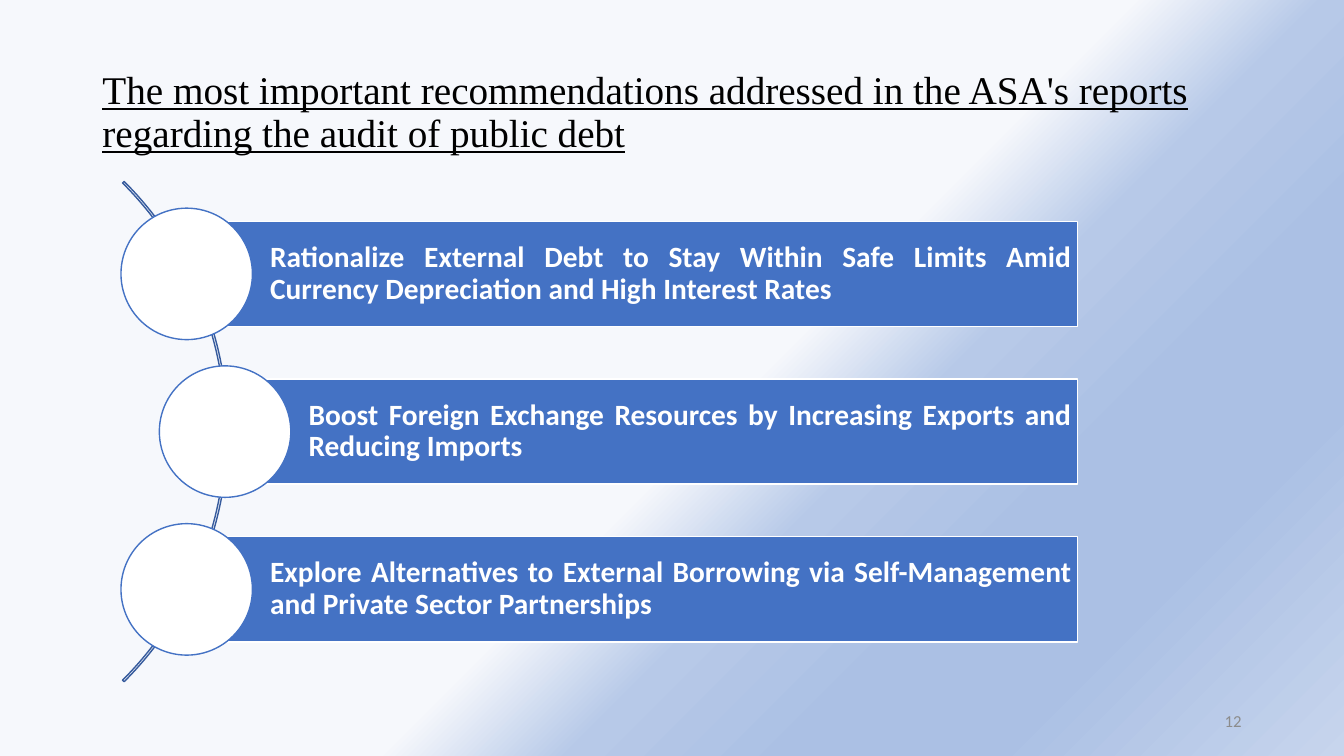
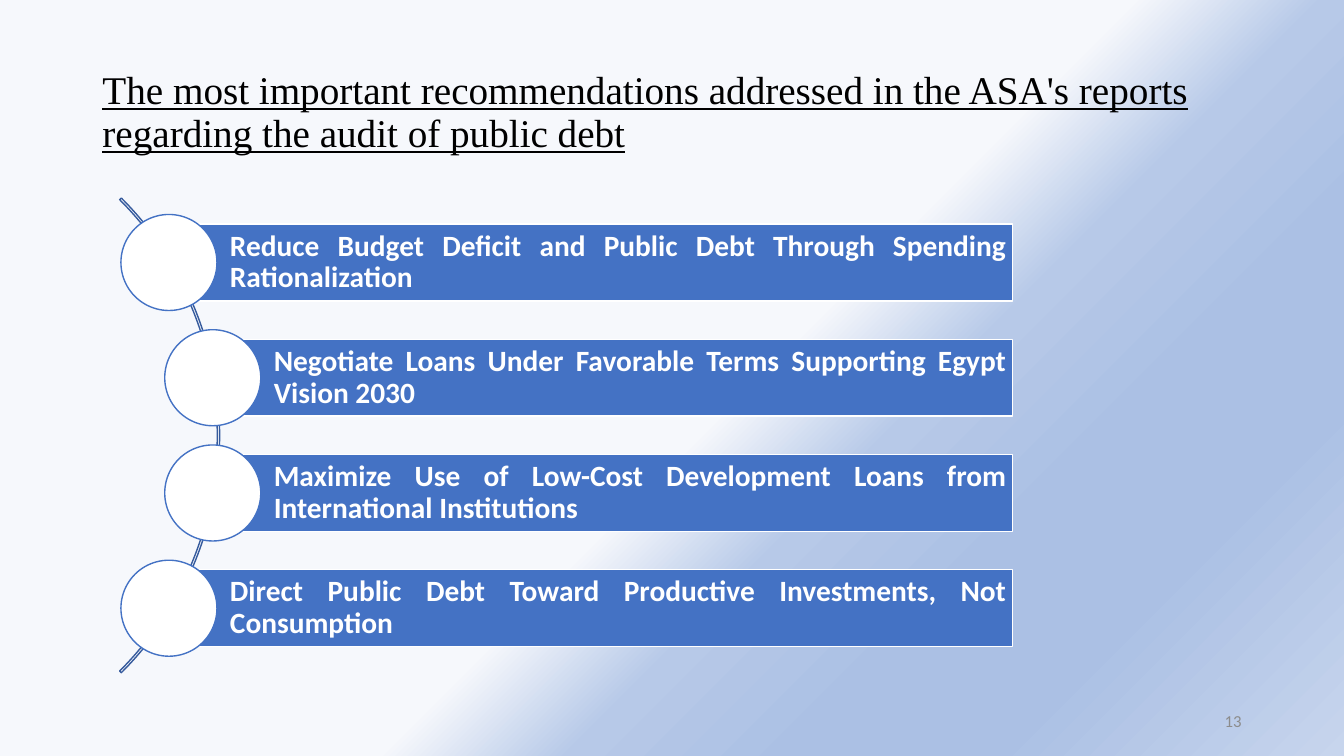
from copy import deepcopy

from pptx import Presentation
from pptx.dml.color import RGBColor
from pptx.enum.shapes import MSO_SHAPE
from pptx.enum.text import MSO_ANCHOR, MSO_AUTO_SIZE, PP_ALIGN
from pptx.oxml import parse_xml
from pptx.oxml.ns import nsdecls, qn
from pptx.util import Pt

# Shared colours and formats
BLACK = RGBColor(0x00, 0x00, 0x00)
WHITE = RGBColor(0xFF, 0xFF, 0xFF)
BLUE = RGBColor(0x44, 0x72, 0xC4)
DARK_BLUE = RGBColor(0x36, 0x5B, 0x9D)
GREY = RGBColor(0x8C, 0x8C, 0x8C)
BACKGROUND_STOPS = [
    (0.54, RGBColor(0xF6, 0xF8, 0xFC)),
    (0.63, RGBColor(0xB7, 0xC9, 0xE8)),
    (0.74, RGBColor(0xAB, 0xC0, 0xE4)),
    (0.83, RGBColor(0xAB, 0xC0, 0xE4)),
    (1.00, RGBColor(0xC7, 0xD5, 0xED)),
]
TITLE = ("The most important recommendations addressed in the ASA's reports "
         "regarding the audit of public debt")
TITLE_FONT = {"name": "Times New Roman", "size": Pt(28), "underline": True}
BAR_FONT = {"name": "Calibri", "size": Pt(21), "bold": True}
NUMBER_FONT = {"name": "Calibri", "size": Pt(12)}
BAR_MARGIN = Pt(4.2)
CIRCLE_LEFT = 86.4
FIRST_NUMBER = 12

# One diagram per slide; each row is (indent, text), lengths in points
DIAGRAMS = [
    {
        "circle": 93.9, "middle": 308.3, "bar_right": 769.6,
        "arc_left": -342.7, "arc_size": 505.4, "arc_thickness": 0.0031,
        "rows": [
            (0, "Rationalize External Debt to Stay Within Safe Limits Amid "
                "Currency Depreciation and High Interest Rates"),
            (27.4, "Boost Foreign Exchange Resources by Increasing Exports and "
                   "Reducing Imports"),
            (0, "Explore Alternatives to External Borrowing via Self-Management "
                "and Private Sector Partnerships"),
        ],
    },
    {
        "circle": 68.6, "middle": 311, "bar_right": 723.1,
        "arc_left": -322.6, "arc_size": 479.5, "arc_thickness": 0.0035,
        "rows": [
            (0, "Reduce Budget Deficit and Public Debt Through Spending "
                "Rationalization"),
            (31.3, "Negotiate Loans Under Favorable Terms Supporting Egypt "
                   "Vision 2030"),
            (31.3, "Maximize Use of Low-Cost Development Loans from "
                   "International Institutions"),
            (0, "Direct Public Debt Toward Productive Investments, Not "
                "Consumption"),
        ],
    },
]


def add_outlined_shape(slide, preset, left, top, width, height, fill, line):
    shape = slide.shapes.add_shape(preset, Pt(left), Pt(top), Pt(width), Pt(height))
    shape.shadow.inherit = False
    if fill is None:
        shape.fill.background()
    else:
        shape.fill.solid()
        shape.fill.fore_color.rgb = fill
    shape.line.color.rgb = line
    shape.line.width = Pt(1)
    return shape


def format_run(run, font_format, color):
    for name, value in font_format.items():
        setattr(run.font, name, value)
    run.font.color.rgb = color


presentation = Presentation()
presentation.slide_width = Pt(960)
presentation.slide_height = Pt(540)
presentation.element.set("firstSlideNum", str(FIRST_NUMBER))

# Gradient background on the master
master = presentation.slide_master
background_fill = master.background.fill
background_fill.gradient()
background_fill.gradient_angle = 315
stop_list = master.element.find(".//" + qn("a:gsLst"))
while len(stop_list) < len(BACKGROUND_STOPS):
    stop_list.append(deepcopy(stop_list[-1]))
for stop, (position, color) in zip(background_fill.gradient_stops, BACKGROUND_STOPS):
    stop.position = position
    stop.color.rgb = color

# Title position on the layout
layout = presentation.slide_layouts.get_by_name("Title Only")
layout_title = layout.placeholders[0]
layout_title.left, layout_title.top = Pt(66), Pt(28.8)
layout_title.width, layout_title.height = Pt(828), Pt(104.4)

for number, diagram in enumerate(DIAGRAMS, FIRST_NUMBER):
    slide = presentation.slides.add_slide(layout)

    # Title
    title_frame = slide.shapes.title.text_frame
    title_frame.auto_size = MSO_AUTO_SIZE.NONE
    title_frame.vertical_anchor = MSO_ANCHOR.MIDDLE
    paragraph = title_frame.paragraphs[0]
    paragraph.alignment = PP_ALIGN.LEFT
    paragraph.line_spacing = 0.9
    run = paragraph.add_run()
    run.text = TITLE
    format_run(run, TITLE_FONT, BLACK)

    # Arc behind the circles
    arc_size = diagram["arc_size"]
    arc = add_outlined_shape(slide, MSO_SHAPE.BLOCK_ARC, diagram["arc_left"],
                             diagram["middle"] - arc_size / 2, arc_size, arc_size,
                             None, DARK_BLUE)
    for index, value in enumerate((189, 27, diagram["arc_thickness"])):
        arc.adjustments[index] = value

    # Rows: a bar starting at the centre of its circle
    circle_size = diagram["circle"]
    bar_height = circle_size * 0.8
    row_pitch = circle_size * 1.2
    first_center = diagram["middle"] - row_pitch * (len(diagram["rows"]) - 1) / 2
    for index, (indent, text) in enumerate(diagram["rows"]):
        center_y = first_center + index * row_pitch
        circle_left = CIRCLE_LEFT + indent
        bar_left = circle_left + circle_size / 2
        bar = add_outlined_shape(slide, MSO_SHAPE.RECTANGLE, bar_left,
                                 center_y - bar_height / 2,
                                 diagram["bar_right"] - bar_left, bar_height,
                                 BLUE, WHITE)
        frame = bar.text_frame
        frame.word_wrap = True
        frame.vertical_anchor = MSO_ANCHOR.MIDDLE
        frame.margin_left = Pt(bar_height * 0.794)
        frame.margin_top = frame.margin_right = frame.margin_bottom = BAR_MARGIN
        paragraph = frame.paragraphs[0]
        paragraph.alignment = PP_ALIGN.JUSTIFY
        paragraph.line_spacing = 0.9
        run = paragraph.add_run()
        run.text = text
        format_run(run, BAR_FONT, WHITE)
        add_outlined_shape(slide, MSO_SHAPE.OVAL, circle_left,
                           center_y - circle_size / 2, circle_size, circle_size,
                           WHITE, BLUE)

    # Slide number as a live field
    number_box = slide.shapes.add_textbox(Pt(678), Pt(500.5), Pt(216), Pt(28.75))
    number_frame = number_box.text_frame
    number_frame.word_wrap = True
    number_frame.vertical_anchor = MSO_ANCHOR.MIDDLE
    paragraph = number_frame.paragraphs[0]
    paragraph.alignment = PP_ALIGN.RIGHT
    run = paragraph.add_run()
    format_run(run, NUMBER_FONT, GREY)
    field = parse_xml(
        f'<a:fld {nsdecls("a")} id="{{B6F15528-21DE-4FAA-801E-634DDDAF4B2B}}" '
        f'type="slidenum"><a:t>{number}</a:t></a:fld>')
    field.insert(0, run.font._element if hasattr(run.font, "_element")
                 else run._r.find(qn("a:rPr")))
    paragraph._p.replace(run._r, field)

presentation.save("out.pptx")
